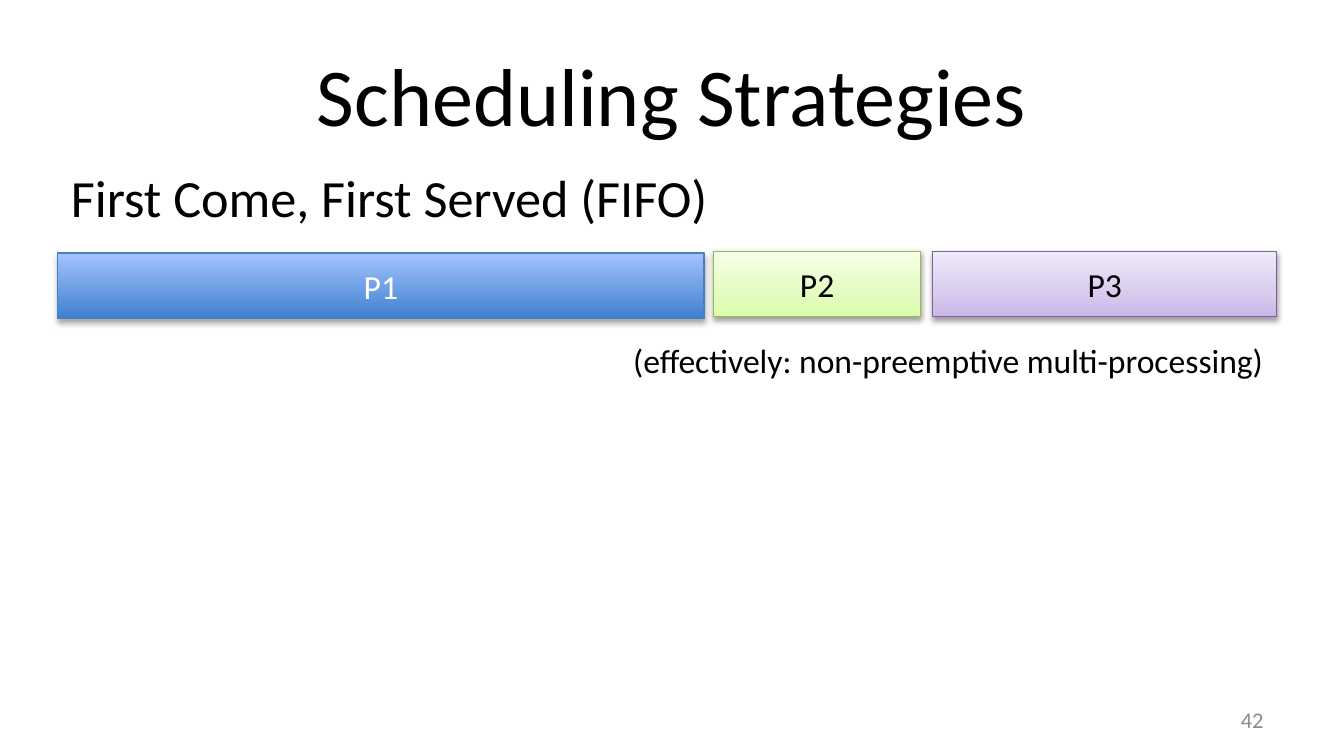
"""Build a slide on first come, first served scheduling."""
from lxml import etree
from pptx import Presentation
from pptx.dml.color import RGBColor
from pptx.enum.shapes import MSO_SHAPE
from pptx.enum.text import MSO_ANCHOR, MSO_AUTO_SIZE, PP_ALIGN
from pptx.oxml.ns import qn
from pptx.util import Cm, Pt

RECTANGLE = MSO_SHAPE.RECTANGLE
TOP, MIDDLE = MSO_ANCHOR.TOP, MSO_ANCHOR.MIDDLE
LEFT, CENTER, RIGHT = PP_ALIGN.LEFT, PP_ALIGN.CENTER, PP_ALIGN.RIGHT
GROW = MSO_AUTO_SIZE.SHAPE_TO_FIT_TEXT

BLACK = RGBColor(0x00, 0x00, 0x00)
WHITE = RGBColor(0xFF, 0xFF, 0xFF)
GRAY = RGBColor(0x8C, 0x8C, 0x8C)
BLUE_LINE = RGBColor(0x4B, 0x7E, 0xBC)
GREEN_LINE = RGBColor(0x98, 0xB9, 0x55)
PURPLE_LINE = RGBColor(0x7D, 0x60, 0xA0)
BLUE_STOPS = {0: RGBColor(0x3F, 0x80, 0xCE), 100: RGBColor(0xA4, 0xC4, 0xFF)}
GREEN_STOPS = {0: RGBColor(0xDA, 0xFD, 0xA7), 35: RGBColor(0xE4, 0xFC, 0xC2),
               100: RGBColor(0xF5, 0xFF, 0xE7)}
PURPLE_STOPS = {0: RGBColor(0xC9, 0xB5, 0xE8), 35: RGBColor(0xD8, 0xCB, 0xEE),
                100: RGBColor(0xF0, 0xEA, 0xF9)}


class SlideBuilder:
    """Hold the style and the current slide."""

    font_name = "Calibri"
    bar_height = 1.24

    def __init__(self, slide):
        self.slide = slide

    def set_text(self, shape, text, size, color, align, anchor):
        """Fill a shape with one formatted paragraph."""
        text_frame = shape.text_frame
        text_frame.text = text
        text_frame.vertical_anchor = anchor
        paragraph = text_frame.paragraphs[0]
        paragraph.alignment = align
        font = paragraph.runs[0].font
        font.name, font.size = self.font_name, Pt(size)
        font.color.rgb = color

    def add_text(self, box, text, size, align, color=BLACK, anchor=MIDDLE):
        """Add a wrapping text box."""
        shape = self.slide.shapes.add_textbox(*map(Cm, box))
        shape.text_frame.word_wrap = True
        self.set_text(shape, text, size, color, align, anchor)
        return shape

    def add_label(self, box, text, size, align):
        """Add a text box that grows with its single line."""
        shape = self.add_text(box, text, size, align, anchor=TOP)
        shape.text_frame.word_wrap = False
        shape.text_frame.auto_size = GROW

    def add_bar(self, left, top, width, text, stops, line_color,
                text_color=BLACK, shadow_distance=1.6, shadow_opacity=38):
        """Add a process bar with a gradient and a soft shadow."""
        shape = self.slide.shapes.add_shape(
            RECTANGLE, Cm(left), Cm(top), Cm(width), Cm(self.bar_height))
        self.set_gradient(shape, stops)
        shape.line.color.rgb = line_color
        shape.line.width = Pt(0.75)
        self.set_shadow(shape, shadow_distance, shadow_opacity)
        self.set_text(shape, text, 18, text_color, CENTER, MIDDLE)

    def set_gradient(self, shape, stops):
        """Fill a shape from bottom to top with the given stops."""
        shape.fill.gradient()
        shape.fill.gradient_angle = 90
        stop_list = shape._element.spPr.find(f"{qn('a:gradFill')}/{qn('a:gsLst')}")
        for stop in list(stop_list):
            stop_list.remove(stop)
        for position, color in stops.items():
            stop = etree.SubElement(stop_list, qn("a:gs"), pos=str(position * 1000))
            etree.SubElement(stop, qn("a:srgbClr"), val=str(color))

    def set_shadow(self, shape, distance, opacity):
        """Give a shape a shadow that falls straight down."""
        shape.shadow.inherit = False
        effects = shape._element.spPr.find(qn("a:effectLst"))
        shadow = etree.SubElement(
            effects, qn("a:outerShdw"), blurRad=str(Pt(3.1)),
            dist=str(Pt(distance)), dir="5400000", rotWithShape="0")
        color = etree.SubElement(shadow, qn("a:srgbClr"), val=str(BLACK))
        etree.SubElement(color, qn("a:alpha"), val=str(opacity * 1000))


def main():
    """Create and save the presentation."""
    presentation = Presentation()
    presentation.slide_width, presentation.slide_height = Cm(25.4), Cm(14.29)
    builder = SlideBuilder(
        presentation.slides.add_slide(presentation.slide_layouts[6]))

    builder.add_text((1.27, 0.58, 22.86, 2.39), "Scheduling Strategies", 44, CENTER)
    builder.add_text((18.21, 13.23, 5.92, 0.76), "42", 12, RIGHT, GRAY)
    builder.add_label((1.09, 3, 12.75, 1.45), "First Come, First Served (FIFO)", 28, LEFT)
    builder.add_bar(1.09, 4.78, 12.22, "P1", BLUE_STOPS, BLUE_LINE, WHITE, 1.8, 35)
    builder.add_bar(13.49, 4.75, 3.91, "P2", GREEN_STOPS, GREEN_LINE)
    builder.add_bar(17.63, 4.75, 6.5, "P3", PURPLE_STOPS, PURPLE_LINE)
    builder.add_label((11.53, 6.3, 12.6, 1.02),
                      "(effectively: non-preemptive multi-processing)", 18, RIGHT)

    presentation.save("out.pptx")


if __name__ == "__main__":
    main()
